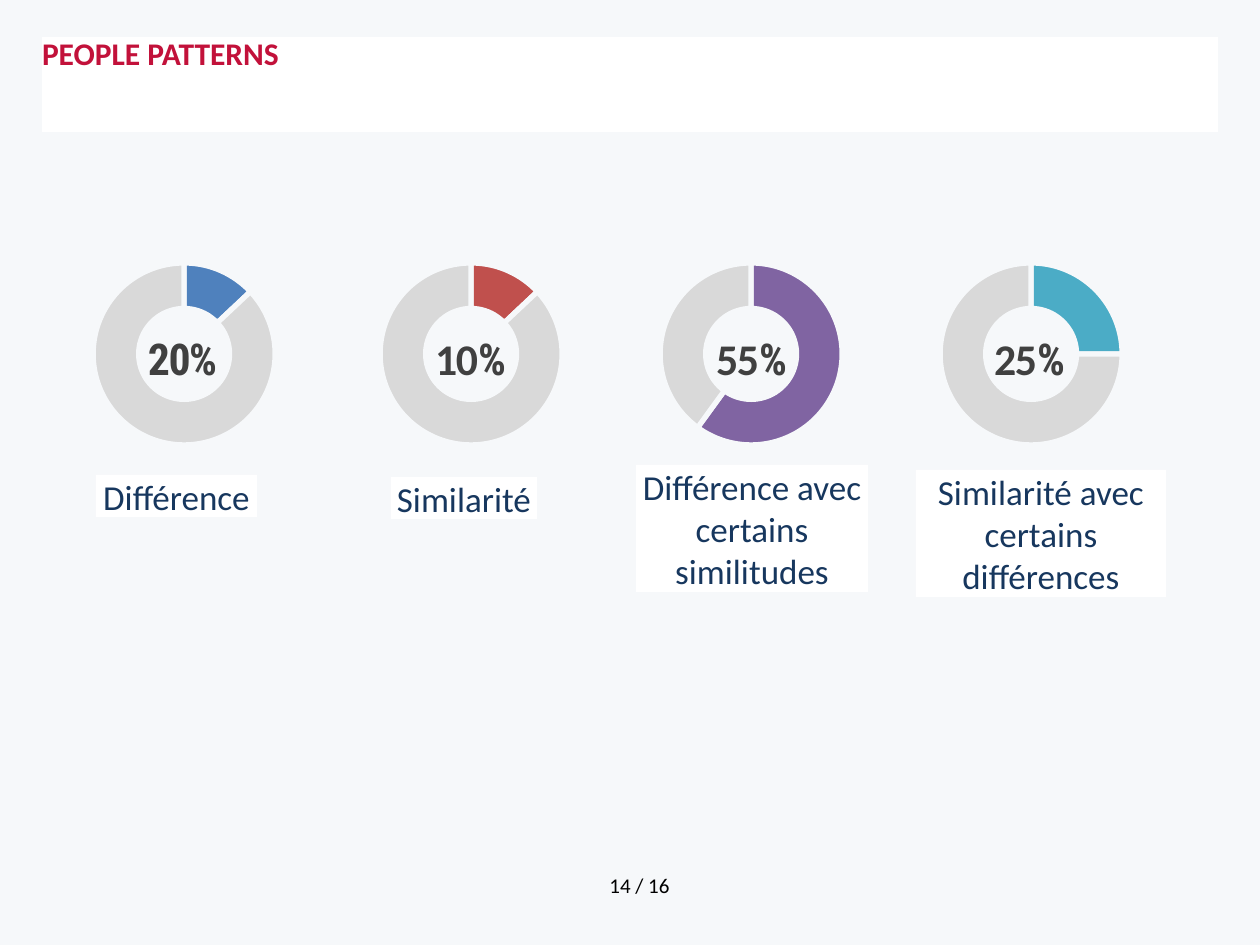
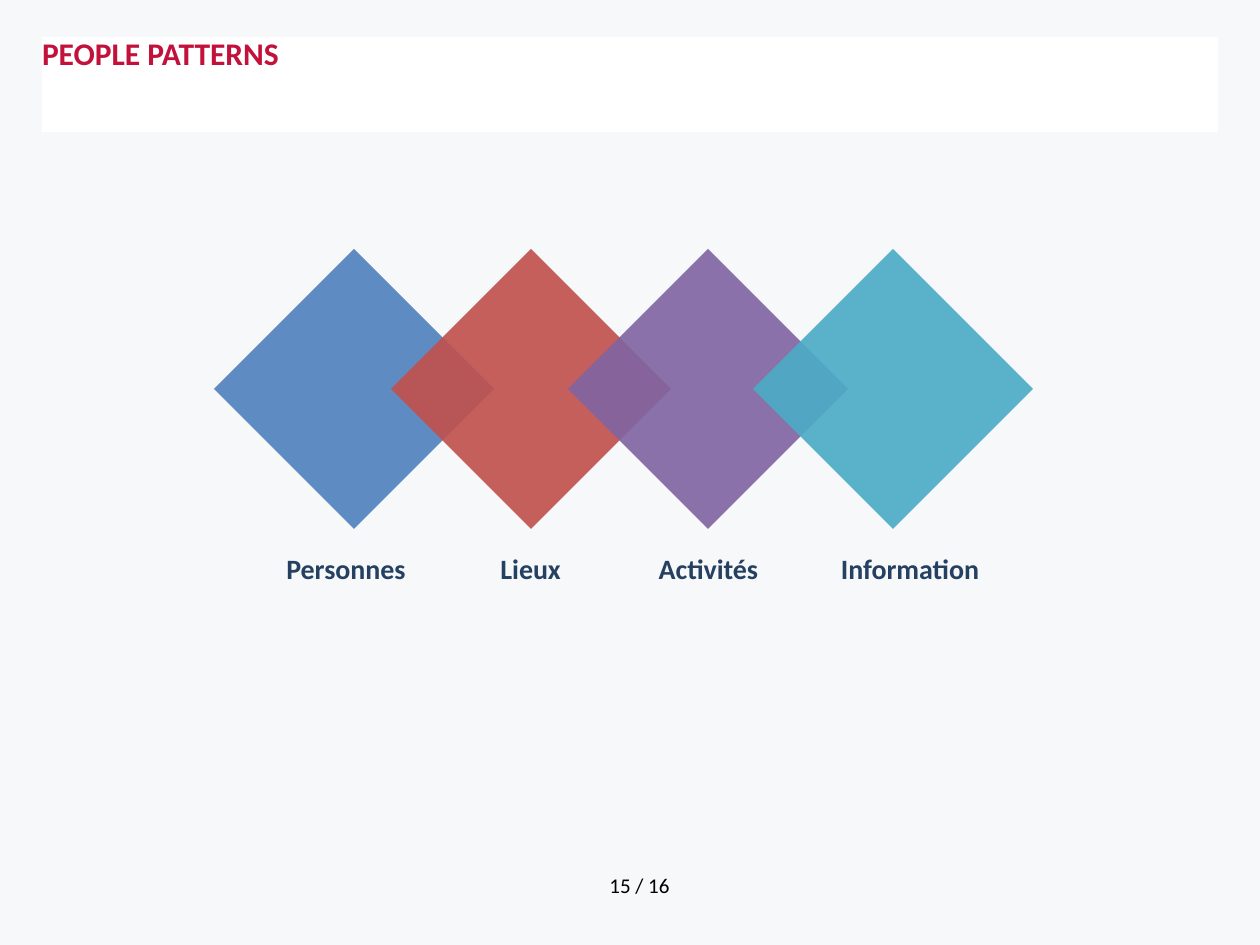
from lxml import etree
from pptx import Presentation
from pptx.chart.data import CategoryChartData
from pptx.dml.color import RGBColor
from pptx.enum.chart import XL_CHART_TYPE as ChartType
from pptx.enum.shapes import MSO_SHAPE as Shape
from pptx.enum.text import MSO_ANCHOR as Anchor, MSO_AUTO_SIZE as AutoSize, PP_ALIGN as Align
from pptx.oxml.ns import qn
from pptx.util import Pt

PX = 914400 / 126
TITLE = "PEOPLE PATTERNS"
PAGE_COUNT = 16
FONT = "Calibri"
NARROW_FONT = "Roboto Condensed"
COLORS = {
    "background": "F6F8FA",
    "white": "FFFFFF",
    "title": "C2113A",
    "caption": "17375E",
    "label": "254061",
    "percent": "404040",
    "rest": "D9D9D9",
    "black": "000000",
    "blue": "4F81BD",
    "red": "C0504D",
    "purple": "8064A2",
    "teal": "4BACC6",
}


def emu(*lengths):
    return [round(length * PX) for length in lengths]


def color(name):
    return RGBColor.from_string(COLORS[name])


def fill_solid(target, name):
    target.fill.solid()
    target.fill.fore_color.rgb = color(name)


def add_run(paragraph, text, size, color_name, bold=False, font=FONT):
    run = paragraph.add_run()
    run.text = text
    run.font.name = font
    run.font.size = Pt(size)
    run.font.bold = bold
    run.font.color.rgb = color(color_name)
    return run


def clear_margins(frame):
    frame.margin_left = frame.margin_right = frame.margin_top = frame.margin_bottom = 0


def add_text_box(slide, box, wrap=False, align=Align.CENTER):
    frame = slide.shapes.add_textbox(*emu(*box)).text_frame
    frame.word_wrap = wrap
    frame.auto_size = AutoSize.SHAPE_TO_FIT_TEXT
    paragraph = frame.paragraphs[0]
    paragraph.alignment = align
    return paragraph


def add_plain_rectangle(slide, box, color_name):
    shape = slide.shapes.add_shape(Shape.RECTANGLE, *emu(*box))
    shape.shadow.inherit = False
    fill_solid(shape, color_name)
    shape.line.fill.background()
    return shape


def add_title_band(slide, box):
    title = slide.shapes.title
    title.left, title.top, title.width, title.height = emu(*box)
    fill_solid(title, "white")
    frame = title.text_frame
    clear_margins(frame)
    frame.auto_size = AutoSize.NONE
    frame.vertical_anchor = Anchor.TOP
    paragraph = frame.paragraphs[0]
    paragraph.alignment = Align.JUSTIFY
    paragraph.line_spacing = Pt(20)
    paragraph.space_before = Pt(0)
    paragraph.space_after = Pt(12)
    add_run(paragraph, TITLE, 18, "title", bold=True)


def add_page_slide(presentation, page):
    slide = presentation.slides.add_slide(presentation.slide_layouts[5])
    add_title_band(slide, (42, 37, 1176, 95))
    paragraph = add_text_box(slide, (552, 866, 175, 39), wrap=True)
    add_run(paragraph, f"{page} / {PAGE_COUNT}", 12, "black")
    return slide


def set_plot_layout(chart, **fractions):
    plot_area = chart.plots[0]._element.getparent()
    layout = plot_area.find(qn("c:layout"))
    if layout is None:
        layout = etree.Element(qn("c:layout"))
        plot_area.insert(0, layout)
    manual = etree.SubElement(layout, qn("c:manualLayout"))
    settings = {"layoutTarget": "inner", "xMode": "edge", "yMode": "edge", **fractions}
    for tag, value in settings.items():
        etree.SubElement(manual, qn(f"c:{tag}")).set("val", str(value))


def add_doughnut(slide, box, share, color_name):
    data = CategoryChartData()
    data.categories = ["1", "2"]
    data.add_series("Series 1", (share, 100 - share))
    chart = slide.shapes.add_chart(ChartType.DOUGHNUT, *emu(*box), data).chart
    chart.has_legend = False
    chart.has_title = False
    chart.font.name = "Arial"
    chart.font.size = Pt(10)
    chart.font.color.rgb = color("black")
    plot = chart.plots[0]
    plot.vary_by_categories = True
    plot._element.find(qn("c:holeSize")).set("val", "77")
    set_plot_layout(chart, x=0.23, y=0.09, w=0.55, h=0.82)
    for index, name in enumerate((color_name, "rest")):
        point_format = plot.series[0].points[index].format
        fill_solid(point_format, name)
        point_format.line.color.rgb = color("background")
        point_format.line.width = Pt(3)


def add_percent(slide, box, number, number_font):
    paragraph = add_text_box(slide, box)
    for text, font in ((number, number_font), ("%", NARROW_FONT)):
        run = add_run(paragraph, text, 25, "percent", bold=True, font=font)
        run.font._element.set("spc", "-80")


def add_caption(slide, box, text, wrap):
    shape = add_plain_rectangle(slide, box, "white")
    frame = shape.text_frame
    clear_margins(frame)
    frame.word_wrap = wrap
    frame.auto_size = AutoSize.SHAPE_TO_FIT_TEXT
    paragraph = frame.paragraphs[0]
    paragraph.alignment = Align.CENTER
    add_run(paragraph, text, 20, "caption")


def build_shares(presentation):
    slide = add_page_slide(presentation, 14)
    gauges = [
        (16, 13, "blue", "20", NARROW_FONT, 132, 101,
         "Différence", (96, 475, 161, 42), False),
        (303, 13, "red", "10", FONT, 417, 107,
         "Similarité", (391, 477, 146, 42), False),
        (583, 60, "purple", "55", FONT, 698, 107,
         "Différence avec certains similitudes", (636, 465, 232, 127), True),
        (863, 25, "teal", "25", FONT, 976, 107,
         "Similarité avec certains différences", (916, 470, 250, 127), True),
    ]
    for (left, share, name, number, font, number_left, number_width,
         caption, caption_box, wrap) in gauges:
        add_doughnut(slide, (left, 243, 333, 222), share, name)
        add_percent(slide, (number_left, 326, number_width, 66), number, font)
        add_caption(slide, caption_box, caption, wrap)


def add_diamond(slide, center_x, center_y, side, color_name):
    box = (center_x - side / 2, center_y - side / 2, side, side)
    shape = add_plain_rectangle(slide, box, color_name)
    shape.rotation = 45
    fill_color = shape.fill._xPr.find(qn("a:solidFill"))[0]
    etree.SubElement(fill_color, qn("a:alpha")).set("val", "91000")


def build_diamonds(presentation):
    slide = add_page_slide(presentation, 15)
    themes = [
        (354, "blue", "Personnes", 266, 160, Align.CENTER),
        (531, "red", "Lieux", 488, 93, Align.LEFT),
        (708, "purple", "Activités", 643, 131, Align.CENTER),
        (893, "teal", "Information", 826, 168, Align.CENTER),
    ]
    for center_x, name, label, left, width, align in themes:
        add_diamond(slide, center_x, 389, 198, name)
        paragraph = add_text_box(slide, (left, 545, width, 47), align=align)
        add_run(paragraph, label, 16, "label", bold=True)


def main():
    presentation = Presentation()
    presentation.slide_width, presentation.slide_height = emu(1260, 945)
    fill_solid(presentation.slide_master.background, "background")
    build_shares(presentation)
    build_diamonds(presentation)
    presentation.save("out.pptx")


if __name__ == "__main__":
    main()
